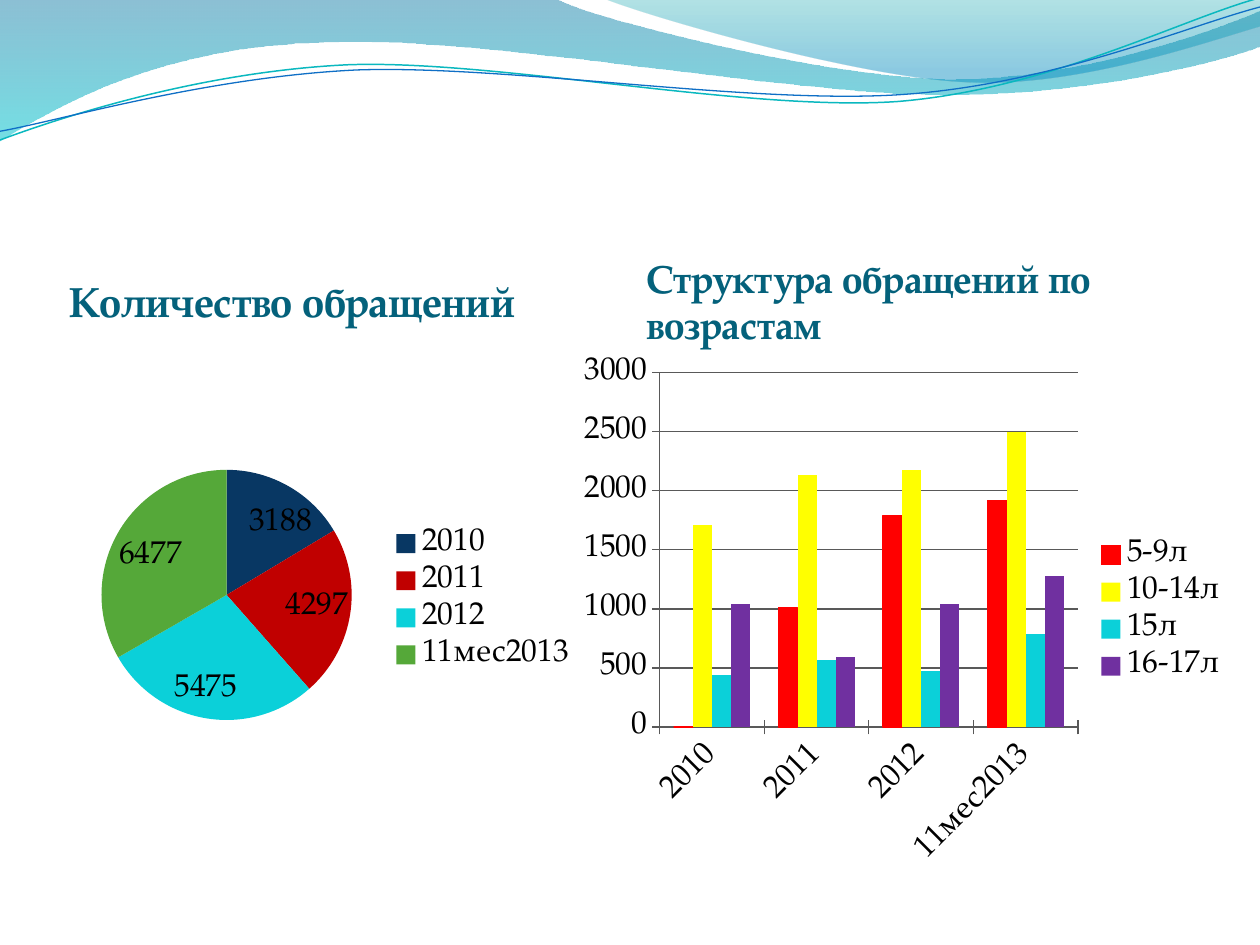
from math import cos, radians, sin

from lxml.etree import SubElement
from pptx import Presentation
from pptx.chart.data import CategoryChartData
from pptx.dml.color import RGBColor
from pptx.enum.chart import XL_CHART_TYPE as ChartType
from pptx.enum.chart import XL_LABEL_POSITION as LabelPos
from pptx.enum.chart import XL_LEGEND_POSITION as LegendPos
from pptx.enum.chart import XL_TICK_MARK as Tick
from pptx.enum.text import MSO_ANCHOR as Anchor
from pptx.oxml import parse_xml
from pptx.oxml.ns import nsdecls, qn
from pptx.util import Pt

BLACK = RGBColor(0x00, 0x00, 0x00)
HEADING = RGBColor(0x04, 0x61, 0x7B)
NAVY = RGBColor(0x08, 0x37, 0x63)
OUTLINE = RGBColor(0x00, 0x20, 0x60)
DARK_RED = RGBColor(0xC0, 0x00, 0x00)
CYAN = RGBColor(0x0B, 0xD0, 0xD9)
GREEN = RGBColor(0x55, 0xA8, 0x39)
RED = RGBColor(0xFF, 0x00, 0x00)
YELLOW = RGBColor(0xFF, 0xFF, 0x00)
PURPLE = RGBColor(0x70, 0x30, 0xA0)
AXIS = RGBColor(0x59, 0x59, 0x59)
TEAL_LINE = RGBColor(0x0A, 0xB8, 0xBF)
BLUE_LINE = RGBColor(0x0F, 0x6F, 0xC6)
WAVE_BLUE = RGBColor(0x00, 0x74, 0xA1)
WAVE_CYAN = RGBColor(0x00, 0xC6, 0xCF)
CREST_TEAL = RGBColor(0x00, 0xA1, 0xA9)
CREST_BLUE = RGBColor(0x00, 0x8B, 0xBF)

YEARS = ["2010", "2011", "2012", "11мес2013"]
TOTALS = [3188, 4297, 5475, 6477]
YEAR_COLORS = [NAVY, DARK_RED, CYAN, GREEN]
LABEL_SHIFTS = [(0.05, 0.03), (0.01, 0.02), (-0.06, -0.01), (-0.01, 0.01)]
AGES = [
    ("5-9л", RED, [0, 1010, 1790, 1920]),
    ("10-14л", YELLOW, [1710, 2130, 2180, 2500]),
    ("15л", CYAN, [440, 570, 470, 790]),
    ("16-17л", PURPLE, [1040, 590, 1040, 1280]),
]

# Outlines in points: a pair is a corner, six numbers are a Bezier curve
WAVE = [(0, 0), (317, -1), (343, 12, 478, 45, 546, 45), (614, 45, 690, 19, 720, 6),
        (721, 26), (708, 32, 626, 55, 537, 54), (448, 54, 275, 20, 185, 24),
        (93, 26, 33, 60, -1, 81), (0, 0)]
CREST = [(345, -1), (366, 8, 491, 45, 554, 47), (616, 50, 692, 23, 720, 15), (720, 0),
         (345, -1)]
TEAL_CURVE = [(0, 80), (35, 67, 114, 41, 199, 37), (284, 34, 427, 64, 513, 58),
              (599, 51, 675, 11, 719, -1)]
BLUE_CURVE = [(0, 75), (34, 69, 118, 44, 204, 40), (290, 37, 430, 60, 516, 54),
              (602, 48, 678, 15, 720, 4)]


def turn(points, degrees, center):
    c, s = cos(radians(degrees)), sin(radians(degrees))
    cx, cy = center
    return [(cx + (x - cx) * c - (y - cy) * s, cy + (x - cx) * s + (y - cy) * c)
            for x, y in points]


def write(frame, text, size, color, font, bold=False):
    run = frame.paragraphs[0].add_run()
    run.text = text
    run.font.size, run.font.name, run.font.bold = Pt(size), font, bold
    run.font.color.rgb = color


def place(parent, index, settings):
    """Give a chart part a manual layout."""
    for old in parent.findall(qn("c:layout")):
        parent.remove(old)
    layout = parse_xml(f"<c:layout {nsdecls('c')}><c:manualLayout/></c:layout>")
    for tag, value in settings:
        SubElement(layout[0], qn(f"c:{tag}")).set("val", str(value))
    parent.insert(index, layout)


def edges(box, size):
    """Turn a box in points into fractions of the chart's size."""
    shares = [round(length / whole, 4) for length, whole in zip(box, size * 2)]
    return [("xMode", "edge"), ("yMode", "edge"), *zip("xywh", shares)]


class Deck:
    font = "TeX Gyre Pagella"
    chart_size = 18
    tilt = 357.3

    def __init__(self):
        self.prs = Presentation()
        self.prs.slide_width, self.prs.slide_height = Pt(720), Pt(540)
        self.slide = self.prs.slides.add_slide(self.prs.slide_layouts[6])

    def outline(self, parts, close, degrees=0, center=(0, 0)):
        points = [part[i:i + 2] for part in parts for i in range(0, len(part), 2)]
        corners = [(Pt(x), Pt(y)) for x, y in turn(points, degrees, center)]
        builder = self.slide.shapes.build_freeform(*corners[0])
        builder.add_line_segments(corners[1:], close=close)
        shape = builder.convert_to_shape()
        shape.shadow.inherit = False
        # Join each three segments of a curve into one Bezier segment
        segments = iter(list(shape.element.iter(qn("a:lnTo"))))
        for part in parts[1:]:
            first = next(segments)
            if len(part) == 6:
                first.tag = qn("a:cubicBezTo")
                for _ in range(2):
                    other = next(segments)
                    first.append(other[0])
                    other.getparent().remove(other)
        return shape

    def wave(self, parts, stops):
        shape = self.outline(parts, close=True)
        shape.line.fill.background()
        shape.fill.gradient()
        shape.fill.gradient_angle = 270
        for stop, (position, color, _) in zip(shape.fill.gradient_stops, stops):
            stop.position = position
            stop.color.rgb = color
        colors = shape.element.spPr.iter(qn("a:srgbClr"))
        for node, (_, _, opacity) in zip(colors, stops):
            SubElement(node, qn("a:alpha")).set("val", str(opacity * 1000))

    def curve(self, parts, color, width, center):
        shape = self.outline(parts, False, 360 - self.tilt, center)
        shape.rotation = self.tilt
        shape.fill.background()
        shape.line.color.rgb, shape.line.width = color, Pt(width)

    def heading(self, text, left, size):
        frame = self.slide.shapes.add_textbox(Pt(left), Pt(146), Pt(318), Pt(52)).text_frame
        frame.word_wrap = True
        frame.vertical_anchor = Anchor.MIDDLE
        frame.margin_left = frame.margin_right = Pt(3.6)
        frame.margin_top = frame.margin_bottom = 0
        write(frame, text, size, HEADING, self.font, bold=True)

    def chart(self, kind, series, box, plot_box, legend_box):
        data = CategoryChartData()
        data.categories = YEARS
        for name, values in series:
            data.add_series(name, values)
        chart = self.slide.shapes.add_chart(kind, *map(Pt, box), data).chart
        chart.has_title = False
        chart.font.name, chart.font.size = self.font, Pt(self.chart_size)
        chart.font.color.rgb = BLACK
        chart.has_legend = True
        chart.legend.position = LegendPos.RIGHT
        chart.legend.include_in_layout = False
        place(chart.element.chart.plotArea, 0,
              [("layoutTarget", "inner"), *edges(plot_box, box[2:])])
        place(chart.legend._element, 1, edges(legend_box, box[2:]))
        return chart

    def pie(self, series, colors, shifts, *boxes):
        plot = self.chart(ChartType.PIE, series, *boxes).plots[0]
        slices = plot.series[0]
        slices.format.line.color.rgb, slices.format.line.width = OUTLINE, Pt(0.75)
        slices.data_labels.show_value = True
        for index, (color, shift) in enumerate(zip(colors, shifts)):
            point = slices.points[index]
            point.format.fill.solid()
            point.format.fill.fore_color.rgb = color
            point.data_label.position = LabelPos.INSIDE_END
        for label, shift in zip(slices._element.iter(qn("c:dLbl")), shifts):
            place(label, 1, zip("xy", shift))

    def columns(self, series, colors, *boxes):
        chart = self.chart(ChartType.COLUMN_CLUSTERED, series, *boxes)
        plot = chart.plots[0]
        plot.vary_by_categories = False
        plot.gap_width, plot.overlap = 150, 0
        for bars, color in zip(plot.series, colors):
            bars.format.fill.solid()
            bars.format.fill.fore_color.rgb = color
        youngest = plot.series[0].format.line
        youngest.color.rgb, youngest.width = colors[0], Pt(0.75)
        years, counts = chart.category_axis, chart.value_axis
        for axis in (years, counts):
            axis.major_tick_mark = Tick.CROSS
            axis.format.line.color.rgb, axis.format.line.width = AXIS, Pt(0.75)
            axis.tick_labels.font.size = Pt(self.chart_size)
        years._element.find(qn("c:txPr")).find(qn("a:bodyPr")).set("rot", "-2700000")
        counts.minimum_scale, counts.maximum_scale, counts.major_unit = 0, 3000, 500
        grid = counts.major_gridlines.format.line
        grid.color.rgb, grid.width = AXIS, Pt(0.75)


def main():
    deck = Deck()

    # Waves along the top
    deck.wave(WAVE, [(0, WAVE_BLUE, 45), (1, WAVE_CYAN, 55)])
    deck.wave(CREST, [(0, CREST_TEAL, 30), (0.8, CREST_BLUE, 45)])
    deck.curve(TEAL_CURVE, TEAL_LINE, 0.85, (359.3, 41.4))
    deck.curve(BLUE_CURVE, BLUE_LINE, 0.75, (359.6, 42.5))

    # Headings
    deck.heading("Количество обращений", 36, 24)
    deck.heading("Структура обращений по возрастам", 366, 22.2)

    # Charts
    deck.pie([("Series 1", TOTALS)], YEAR_COLORS, LABEL_SHIFTS, (22, 191.5, 315.5, 303),
             (36, 77, 143, 143), (197, 107, 114, 88))
    deck.columns([(age, values) for age, _, values in AGES], [color for _, color, _ in AGES],
                 (326, 198, 382.5, 303), (51, 15, 239, 202.5), (297, 107, 80, 88))

    deck.prs.save("out.pptx")


if __name__ == "__main__":
    main()
